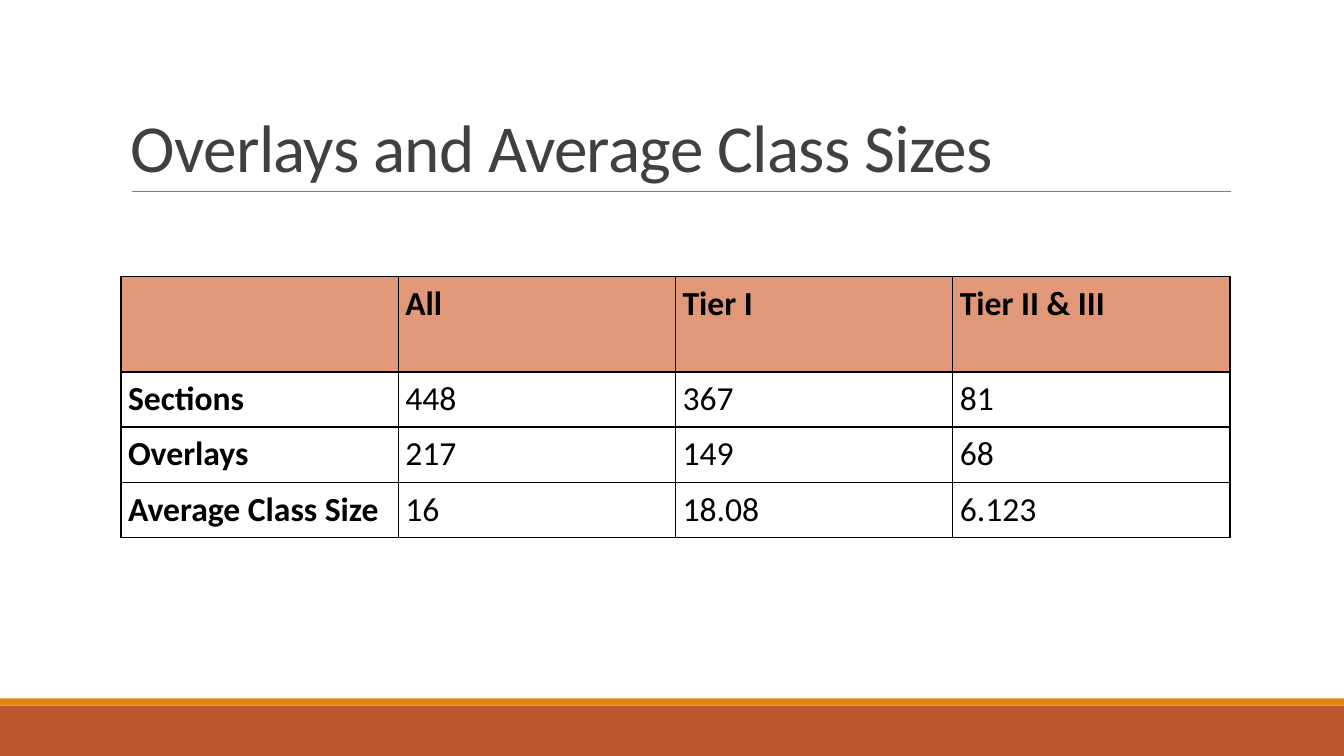
import pptx
import pptx.util
import pptx.dml.color
import pptx.enum.shapes
import pptx.enum.text
import pptx.oxml
import pptx.oxml.ns

Inches, Pt = pptx.util.Inches, pptx.util.Pt
COLORS = {
    "rust": "BD582C", "orange": "E48312", "rule": "808080",
    "title": "404040", "head": "E09878", "ink": "000000",
}
ROWS = [
    ("", "All", "Tier I", "Tier II & III"),
    ("Sections", "448", "367", "81"),
    ("Overlays", "217", "149", "68"),
    ("Average Class Size", "16", "18.08", "6.123"),
]


def color(name):
    return pptx.dml.color.RGBColor.from_string(COLORS[name])


def write(frame, text, size=24, ink="ink", bold=False, lead=None, track=None):
    para = frame.paragraphs[0]
    para.line_spacing = lead
    run = para.add_run()
    run.text = text
    font = run.font
    font.name, font.size, font.bold = "Calibri", Pt(size), bold
    font.color.rgb = color(ink)
    if track is not None:
        run._r.get_or_add_rPr().set("spc", str(round(track * 100)))


def add_bar(slide, left, top, width, height, fill):
    bar = slide.shapes.add_shape(
        pptx.enum.shapes.MSO_SHAPE.RECTANGLE,
        Inches(left), Inches(top), Inches(width), Inches(height))
    bar.shadow.inherit = False
    bar.fill.solid()
    bar.fill.fore_color.rgb = color(fill)
    bar.line.fill.background()


def add_footer(slide, left, top, width, height):
    strip = 0.07
    add_bar(slide, left, top + strip, width, height - strip, "rust")
    add_bar(slide, left, top, width, strip, "orange")


def add_title(slide, left, top, width, height):
    # Rule under the title
    base = Inches(top + height)
    rule = slide.shapes.add_connector(
        pptx.enum.shapes.MSO_CONNECTOR.STRAIGHT,
        Inches(left + 0.11), base, Inches(left + width + 0.01), base)
    rule.line.color.rgb = color("rule")
    rule.line.width = Pt(0.5)
    rule._element.spPr.append(pptx.oxml.parse_xml(
        f'<a:effectLst {pptx.oxml.ns.nsdecls("a")}/>'))
    # Heading
    box = slide.shapes.add_textbox(
        Inches(left), Inches(top), Inches(width), Inches(height))
    frame = box.text_frame
    frame.word_wrap = True
    frame.vertical_anchor = pptx.enum.text.MSO_ANCHOR.BOTTOM
    write(frame, "Overlays and Average Class Sizes",
          size=48, ink="title", lead=0.85, track=-0.5)


def add_edges(cell):
    props = cell._tc.get_or_add_tcPr()
    for side in ("lnL", "lnR", "lnT", "lnB"):
        props.append(pptx.oxml.parse_xml(
            f'<a:{side} {pptx.oxml.ns.nsdecls("a")} w="{Pt(1)}"><a:solidFill>'
            f'<a:srgbClr val="{COLORS["ink"]}"/></a:solidFill></a:{side}>'))


def add_grid(slide, left, top, width, height):
    head = 0.95
    grid = slide.shapes.add_table(
        len(ROWS), len(ROWS[0]), Inches(left), Inches(top),
        Inches(width), Inches(height)).table
    grid.horz_banding = grid.first_row = False
    step = (height - head) / (len(ROWS) - 1)
    for r, texts in enumerate(ROWS):
        grid.rows[r].height = Inches(step if r else head)
        for c, text in enumerate(texts):
            cell = grid.cell(r, c)
            cell.margin_left = cell.margin_right = Inches(0.07)
            cell.margin_top = cell.margin_bottom = Inches(0.07)
            add_edges(cell)
            if r == 0:
                cell.fill.solid()
                cell.fill.fore_color.rgb = color("head")
            else:
                cell.fill.background()
            if text:
                write(cell.text_frame, text, bold=r == 0 or c == 0)


def main():
    deck = pptx.Presentation()
    deck.slide_width, deck.slide_height = Inches(13.33), Inches(7.5)
    slide = deck.slides.add_slide(deck.slide_layouts[6])
    add_footer(slide, 0, 6.93, 13.33, 0.57)
    add_title(slide, 1.2, 0.31, 11, 1.59)
    add_grid(slide, 1.2, 2.74, 11, 2.59)
    deck.save("out.pptx")


if __name__ == "__main__":
    main()
